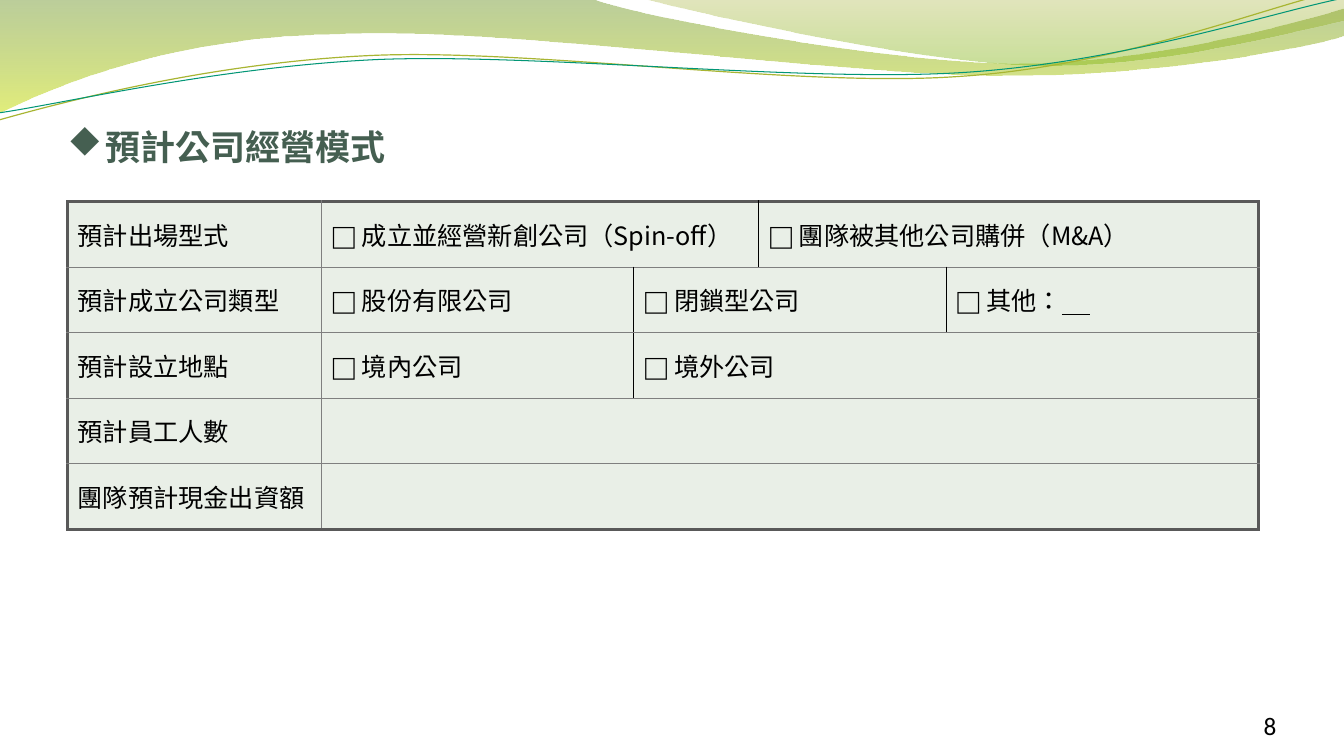
"""Build the slide on the planned company operating model."""
import lxml.etree
import pptx
import pptx.dml.color
import pptx.enum.text
import pptx.oxml.ns
import pptx.util

RGBColor = pptx.dml.color.RGBColor
Inches = pptx.util.Inches
qn = pptx.oxml.ns.qn

TITLE = "預計公司經營模式"
PAGE_NUMBER = "8"
BOX = "⬜"
BLANK = " " * 5

# Each option: first column, last column, text, underlined blank
ROWS = [
    ("預計出場型式", [(1, 2, "成立並經營新創公司（Spin-off）", ""),
                (3, 4, "團隊被其他公司購併（M&A）", "")]),
    ("預計成立公司類型", [(1, 1, "股份有限公司", ""), (2, 3, "閉鎖型公司", ""),
                  (4, 4, "其他：", BLANK)]),
    ("預計設立地點", [(1, 1, "境內公司", ""), (2, 4, "境外公司", "")]),
    ("預計員工人數", [(1, 4, "", "")]),
    ("團隊預計現金出資額", [(1, 4, "", "")]),
]

BLACK = RGBColor(0x00, 0x00, 0x00)
TITLE_GREEN = RGBColor(0x45, 0x5F, 0x51)
CELL_GREEN = RGBColor(0xE9, 0xEF, 0xE7)
FRAME_GREY = RGBColor(0x59, 0x59, 0x59)
GRID_GREY = RGBColor(0x7F, 0x7F, 0x7F)
OLIVE = RGBColor(0xA8, 0xB5, 0x32)
TEAL = RGBColor(0x02, 0x96, 0x76)

CJK_FONT = "Noto Sans CJK TC"
SYMBOL_FONT = "Noto Sans"
NUMBER_FONT = "Calibri"

FRAME = (FRAME_GREY, 2.25)
GRID = (GRID_GREY, 1)
DIVIDER = (BLACK, 0.75)

WIDTH, HEIGHT = 13.33, 7.5
MARGIN = 0.67
TABLE_TOP = 2
ROW_HEIGHT = 0.65
LABEL_WIDTH, OPTIONS_WIDTH, SPLIT = 2.52, 9.29, 0.4
OPTION_WIDTH = OPTIONS_WIDTH / 3
COLUMNS = [LABEL_WIDTH, OPTION_WIDTH, OPTION_WIDTH * SPLIT,
           OPTION_WIDTH * (1 - SPLIT), OPTION_WIDTH]

# One point is a straight segment, three points are a Bezier curve
BANDS = [
    ([(0, 0), [(5.87, -0.01)],
      [(6.34, 0.17), (8.84, 0.63), (10.11, 0.63)],
      [(11.37, 0.63), (12.77, 0.26), (13.33, 0.09)], [(13.34, 0.36)],
      [(13.11, 0.44), (11.59, 0.76), (9.94, 0.75)],
      [(8.29, 0.75), (5.09, 0.28), (3.43, 0.34)],
      [(1.72, 0.36), (0.61, 0.83), (-0.02, 1.13)]],
     [(RGBColor(0x66, 0x8F, 0x1B), 44), (RGBColor(0xCA, 0xE0, 0x0E), 55)]),
    ([(6.38, -0.01), [(6.79, 0.11), (9.09, 0.62), (10.25, 0.65)],
      [(11.4, 0.69), (12.82, 0.32), (13.33, 0.21)], [(13.33, 0)]],
     [(RGBColor(0x99, 0xA7, 0x19), 29), (RGBColor(0x80, 0xB8, 0x14), 44)]),
]
WAVES = [
    ([(-0.01, 1.19), [(0.63, 1.01), (2.1, 0.62), (3.69, 0.55)],
      [(5.27, 0.48), (7.89, 0.87), (9.49, 0.76)],
      [(11.1, 0.66), (12.51, 0.08), (13.3, -0.1)]], OLIVE, 0.85),
    ([(-0.01, 1.12), [(0.62, 1.03), (2.18, 0.66), (3.77, 0.59)],
      [(5.37, 0.53), (7.96, 0.82), (9.55, 0.72)],
      [(11.14, 0.62), (12.55, 0.14), (13.33, -0.02)]], TEAL, 0.75),
]


def add_outline(slide, outline, close):
    """Add a freeform that follows straight and curved segments."""
    start, segments = outline[0], outline[1:]
    builder = slide.shapes.build_freeform(Inches(start[0]), Inches(start[1]))
    builder.add_line_segments([(Inches(x), Inches(y)) for segment in segments
                               for x, y in segment], close=close)
    shape = builder.convert_to_shape()
    shape.shadow.inherit = False
    steps = iter(list(shape.element.spPr.iter(qn("a:lnTo"))))
    for segment in segments:
        group = [next(steps) for _ in segment]
        if len(group) == 3:
            curve = lxml.etree.Element(qn("a:cubicBezTo"))
            group[0].addprevious(curve)
            for step in group:
                curve.append(step[0])
                step.getparent().remove(step)
    return shape


def add_band(slide, outline, stops):
    """Add a translucent band shaded from top to bottom."""
    shape = add_outline(slide, outline, True)
    shape.line.fill.background()
    shape.fill.gradient()
    shape.fill.gradient_angle = 270
    for stop, (color, _) in zip(shape.fill.gradient_stops, stops):
        stop.color.rgb = color
    colors = shape.element.spPr.iter(qn("a:srgbClr"))
    for element, (_, opacity) in zip(list(colors), stops):
        lxml.etree.SubElement(element, qn("a:alpha"), val=str(opacity * 1000))


def add_wave(slide, outline, color, width):
    """Add a thin open curve."""
    shape = add_outline(slide, outline, False)
    shape.fill.background()
    shape.line.color.rgb = color
    shape.line.width = pptx.util.Pt(width)


def format_run(run, name, size=18, color=BLACK):
    """Set the font of a run for Latin and East Asian text."""
    run.font.name = name
    run.font.size = pptx.util.Pt(size)
    run.font.color.rgb = color
    properties = run._r.get_or_add_rPr()
    properties.set("lang", "zh-TW")
    lxml.etree.SubElement(properties, qn("a:ea"), typeface=name)


def add_run(paragraph, text, name):
    """Append a formatted run to a paragraph."""
    run = paragraph.add_run()
    run.text = text
    format_run(run, name)
    return run


def fill_title(slide):
    """Place the title with its diamond bullet."""
    title = slide.shapes.title
    title.left, title.top = Inches(MARGIN), Inches(0.41)
    title.width, title.height = Inches(WIDTH - 2 * MARGIN), Inches(1.25)
    frame = title.text_frame
    frame.text = TITLE
    frame.margin_left = frame.margin_right = frame.margin_bottom = 0
    frame.vertical_anchor = pptx.enum.text.MSO_ANCHOR.BOTTOM
    paragraph = frame.paragraphs[0]
    paragraph.alignment = pptx.enum.text.PP_ALIGN.LEFT
    properties = paragraph._p.get_or_add_pPr()
    indent = Inches(0.38)
    properties.set("marL", str(indent))
    properties.set("indent", str(-indent))
    bullet_color = lxml.etree.SubElement(properties, qn("a:buClr"))
    lxml.etree.SubElement(bullet_color, qn("a:srgbClr"), val=str(TITLE_GREEN))
    lxml.etree.SubElement(properties, qn("a:buFont"), typeface="Wingdings",
                          pitchFamily="2", charset="2")
    lxml.etree.SubElement(properties, qn("a:buChar"), char="u")
    format_run(paragraph.runs[0], CJK_FONT, 25, TITLE_GREEN)
    paragraph.runs[0].font.bold = True


def border_cell(cell, borders):
    """Draw the given sides of a cell and fill it."""
    properties = cell._tc.get_or_add_tcPr()
    for side, (color, width) in borders.items():
        line = lxml.etree.SubElement(properties, qn("a:ln" + side),
                                     w=str(pptx.util.Pt(width)))
        fill = lxml.etree.SubElement(line, qn("a:solidFill"))
        lxml.etree.SubElement(fill, qn("a:srgbClr"), val=str(color))
    cell.fill.solid()
    cell.fill.fore_color.rgb = CELL_GREEN


def format_span(table, row, first, last):
    """Merge the columns of one entry and draw its borders."""
    end = len(COLUMNS) - 1
    borders = {
        "L": FRAME if first == 0 else GRID if first == 1 else DIVIDER,
        "R": FRAME if last == end else GRID if last == 0 else DIVIDER,
        "T": FRAME if row == 0 else GRID,
        "B": FRAME if row == len(ROWS) - 1 else GRID,
    }
    if last > first:
        table.cell(row, first).merge(table.cell(row, last))
    for column in range(first, last + 1):
        sides = "LRTB" if column == first else "RTB" if column == last else "TB"
        border_cell(table.cell(row, column), {side: borders[side] for side in sides})
    cell = table.cell(row, first)
    cell.vertical_anchor = pptx.enum.text.MSO_ANCHOR.MIDDLE
    return cell.text_frame.paragraphs[0]


def add_company_table(slide):
    """Add the table of company options."""
    table = slide.shapes.add_table(
        len(ROWS), len(COLUMNS), Inches(MARGIN), Inches(TABLE_TOP),
        Inches(sum(COLUMNS)), Inches(ROW_HEIGHT * len(ROWS))).table
    table.first_row = table.horz_banding = False
    for column, width in zip(table.columns, COLUMNS):
        column.width = Inches(width)
    for row, (label, options) in enumerate(ROWS):
        add_run(format_span(table, row, 0, 0), label, CJK_FONT)
        for first, last, text, blank in options:
            paragraph = format_span(table, row, first, last)
            if text:
                add_run(paragraph, BOX, SYMBOL_FONT)
                add_run(paragraph, " " + text, CJK_FONT)
            if blank:
                add_run(paragraph, blank, CJK_FONT).font.underline = True


def add_page_number(slide):
    """Add the page number at the lower right."""
    width = 1.11
    frame = slide.shapes.add_textbox(
        Inches(WIDTH - MARGIN - width), Inches(6.95), Inches(width), Inches(0.4)).text_frame
    frame.word_wrap = True
    frame.margin_left = frame.margin_right = frame.margin_top = frame.margin_bottom = 0
    frame.vertical_anchor = pptx.enum.text.MSO_ANCHOR.BOTTOM
    frame.paragraphs[0].alignment = pptx.enum.text.PP_ALIGN.RIGHT
    add_run(frame.paragraphs[0], PAGE_NUMBER, NUMBER_FONT)


def main():
    """Build and save the presentation."""
    presentation = pptx.Presentation()
    presentation.slide_width, presentation.slide_height = Inches(WIDTH), Inches(HEIGHT)
    slide = presentation.slides.add_slide(presentation.slide_layouts[5])
    for band in BANDS:
        add_band(slide, *band)
    for wave in WAVES:
        add_wave(slide, *wave)
    fill_title(slide)
    add_company_table(slide)
    add_page_number(slide)
    presentation.save("out.pptx")


if __name__ == "__main__":
    main()
